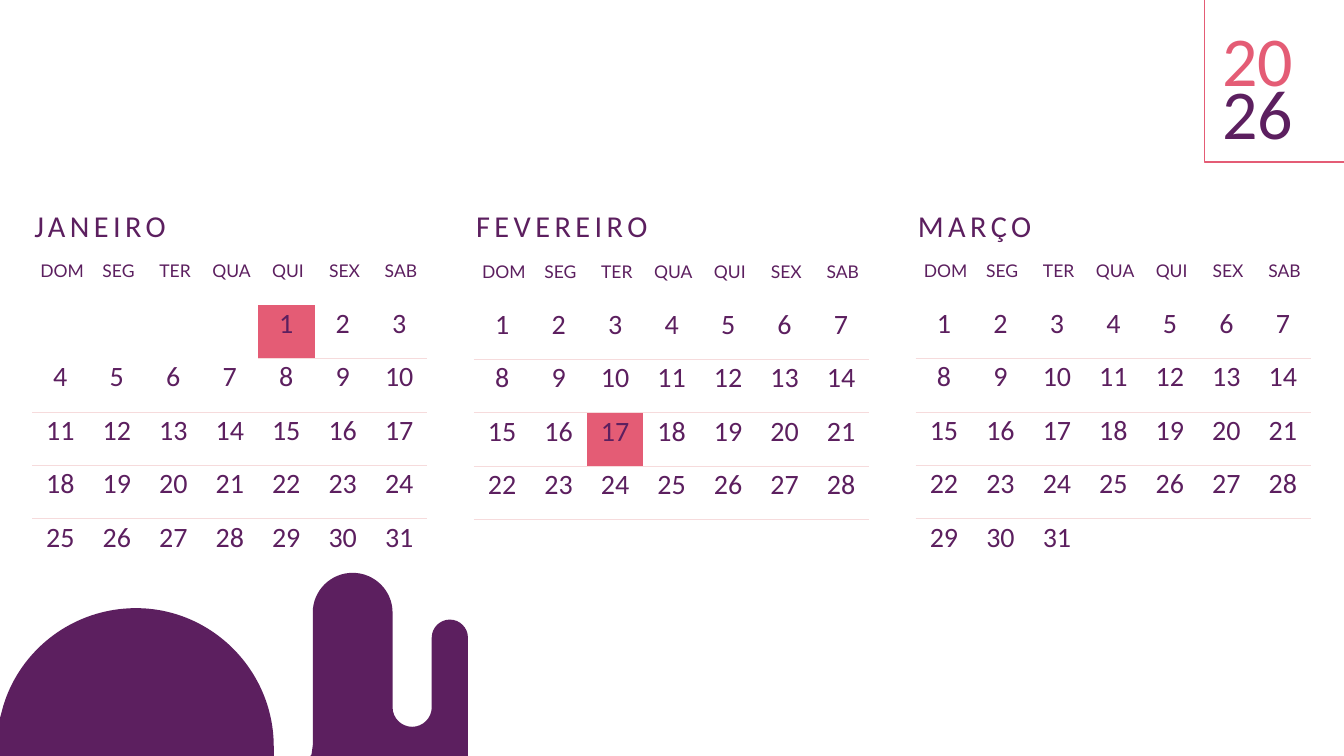
from lxml import etree
from pptx import Presentation
from pptx.dml.color import RGBColor
from pptx.enum import shapes, text
from pptx.oxml.ns import qn
from pptx.util import Pt

PURPLE, PINK, PALE = "5C1F5F", "E45C75", "F6DBDC"
WEEKDAYS = ["DOM", "SEG", "TER", "QUA", "QUI", "SEX", "SAB"]
# name, column of day 1, number of days, holiday, top of the table, height of a week
MONTHS = [
    ("JANEIRO", 4, 31, 1, 221.3, 45.8),
    ("FEVEREIRO", 0, 28, 17, 222.3, 45.65),
    ("MARÇO", 0, 31, None, 221.3, 45.8),
]
YEAR = [("20", PINK), ("26", PURPLE)]

WEEKS = 5
MONTH_LEFT, MONTH_PITCH = 27.5, 378.7
COLUMN_WIDTH, HEADER_HEIGHT = 48.43, 40.3
TITLE_TOP, TITLE_OFFSET = 174.2, -5.2
PLAIN_TABLE_STYLE = "{2D5ABB26-0587-4C30-8999-92F81FD0307C}"

# Each corner is x, y and, for a curve, how it leaves the corner before: a share of
# the way along x and y for its first handle, then for its second handle.
RISE = (0, 0.55, 0.45, 1)    # quarter circle that starts vertically
TURN = (0.55, 0, 1, 0.45)    # quarter circle that starts horizontally
HILL = [
    (0, 650.5, None), (0, 615.6, None), (2.9, 604.8, None),
    (116.6, 521.3, (0.13, 0.58, 0.53, 1)), (234.7, 640, TURN), (234.7, 650.5, None),
]
TOWERS = [
    (264.2, 650.5, None), (267.1, 646.6, None), (268.1, 639, None), (268.1, 525, None),
    (302.3, 491, RISE), (336.5, 525, TURN), (336.5, 606.2, None),
    (353.3, 623, RISE), (370.1, 606.2, TURN), (370.1, 546.5, None),
    (385.6, 531.1, RISE), (401.1, 546.5, TURN), (401.1, 650.5, None),
]


def color(hex_text):
    return RGBColor.from_string(hex_text)


def write(paragraph, words, size=24, font="Calibri", ink=PURPLE, align=None,
          spacing=None, tracking=None):
    paragraph.alignment = align
    paragraph.line_spacing = spacing
    run = paragraph.add_run()
    run.text = words
    run.font.size = Pt(size)
    run.font.name = font
    run.font.color.rgb = color(ink)
    if tracking:
        run._r.get_or_add_rPr().set("spc", str(round(tracking * 100)))


def add_text_frame(slide, left, top, width, height, wrap=True):
    box = slide.shapes.add_textbox(Pt(left), Pt(top), Pt(width), Pt(height))
    box.text_frame.word_wrap = wrap
    box.text_frame.auto_size = text.MSO_AUTO_SIZE.SHAPE_TO_FIT_TEXT
    return box.text_frame


def add_border(cell, side):
    """Draw a pale line on one side of a cell: lnT or lnB."""
    line = etree.SubElement(cell._tc.get_or_add_tcPr(), qn(f"a:{side}"), w=str(Pt(1)))
    fill = etree.SubElement(line, qn("a:solidFill"))
    etree.SubElement(fill, qn("a:srgbClr"), val=PALE)


def set_margins(cell, left, right):
    cell.margin_left, cell.margin_right = Pt(left), Pt(right)
    cell.margin_top = cell.margin_bottom = Pt(1.5)


def add_calendar(slide, left, top, week_height, first_column, day_count, holiday):
    frame = slide.shapes.add_table(
        WEEKS + 1, 7, Pt(left), Pt(top), Pt(7 * COLUMN_WIDTH),
        Pt(HEADER_HEIGHT + WEEKS * week_height))
    table = frame.table
    table.first_row = table.horz_banding = False
    table._tbl.tblPr.find(qn("a:tableStyleId")).text = PLAIN_TABLE_STYLE
    for column in table.columns:
        column.width = Pt(COLUMN_WIDTH)
    for index, row in enumerate(table.rows):
        row.height = Pt(week_height if index else HEADER_HEIGHT)

    for index, name in enumerate(WEEKDAYS):
        cell = table.cell(0, index)
        set_margins(cell, 3, 0)
        cell.fill.background()
        write(cell.text_frame.paragraphs[0], name, size=15, font="Lato",
              align=text.PP_ALIGN.CENTER)

    for position in range(WEEKS * 7):
        week, column = divmod(position, 7)
        day = position - first_column + 1
        cell = table.cell(week + 1, column)
        set_margins(cell, 3.6, 3.6)
        if week > 0 and day > 7:
            add_border(cell, "lnT")
        if week < WEEKS - 1 and day > 0:
            add_border(cell, "lnB")
        if day == holiday:
            cell.fill.solid()
            cell.fill.fore_color.rgb = color(PINK)
        else:
            cell.fill.background()
        if 1 <= day <= day_count:
            write(cell.text_frame.paragraphs[0], str(day), align=text.PP_ALIGN.CENTER)


def bend(segment, start, end, handles):
    """Turn a straight segment of a freeform into a Bézier curve."""
    curve = etree.Element(qn("a:cubicBezTo"))
    shares = (handles[:2], handles[2:], (1, 1))
    for share in shares:
        x, y = (round(a + (b - a) * s) for a, b, s in zip(start, end, share))
        etree.SubElement(curve, qn("a:pt"), x=str(x), y=str(y))
    segment.getparent().replace(segment, curve)


def add_landscape(slide):
    hill, towers = ([(Pt(x), Pt(y)) for x, y, _ in corners] for corners in (HILL, TOWERS))
    builder = slide.shapes.build_freeform(*hill[0])
    builder.add_line_segments(hill[1:])
    builder.move_to(*towers[0])
    builder.add_line_segments(towers[1:])
    shape = builder.convert_to_shape()

    segments = list(shape._element.iter(qn("a:moveTo"), qn("a:lnTo")))
    # A closing segment back to the first corner is only kept for straight outlines.
    drawn = [s for s in segments if s.getnext() is None
             or s.getnext().tag != qn("a:close") or len(segments) == len(HILL + TOWERS)]
    points = [(int(s[0].get("x")), int(s[0].get("y"))) for s in drawn]
    for index, (_, _, handles) in enumerate(HILL + TOWERS):
        if handles:
            bend(drawn[index], points[index - 1], points[index], handles)

    shape.shadow.inherit = False
    shape.fill.solid()
    shape.fill.fore_color.rgb = color(PURPLE)
    shape.line.fill.background()


def add_year(slide):
    frame = add_text_frame(slide, 1040.4, 34, 86.4, 102.2, wrap=False)
    for index, (digits, ink) in enumerate(YEAR):
        paragraph = frame.add_paragraph() if index else frame.paragraphs[0]
        write(paragraph, digits, size=60, ink=ink, spacing=0.63)

    border = slide.shapes.add_shape(
        shapes.MSO_SHAPE.RECTANGLE, Pt(1032.5), Pt(-25.2), Pt(149), Pt(164.2))
    border.shadow.inherit = False
    border.fill.background()
    border.line.color.rgb = color(PINK)
    border.line.width = Pt(1.5)


def main():
    presentation = Presentation()
    presentation.slide_width, presentation.slide_height = Pt(1152), Pt(648)
    slide = presentation.slides.add_slide(presentation.slide_layouts[6])
    for index, (name, first_column, day_count, holiday, top, height) in enumerate(MONTHS):
        left = MONTH_LEFT + index * MONTH_PITCH
        add_calendar(slide, left, top, height, first_column, day_count, holiday)
        title = add_text_frame(slide, left + TITLE_OFFSET, TITLE_TOP, 232, 38.9)
        write(title.paragraphs[0], name, size=26, tracking=3.8)
    add_year(slide)
    add_landscape(slide)
    presentation.save("out.pptx")


if __name__ == "__main__":
    main()
